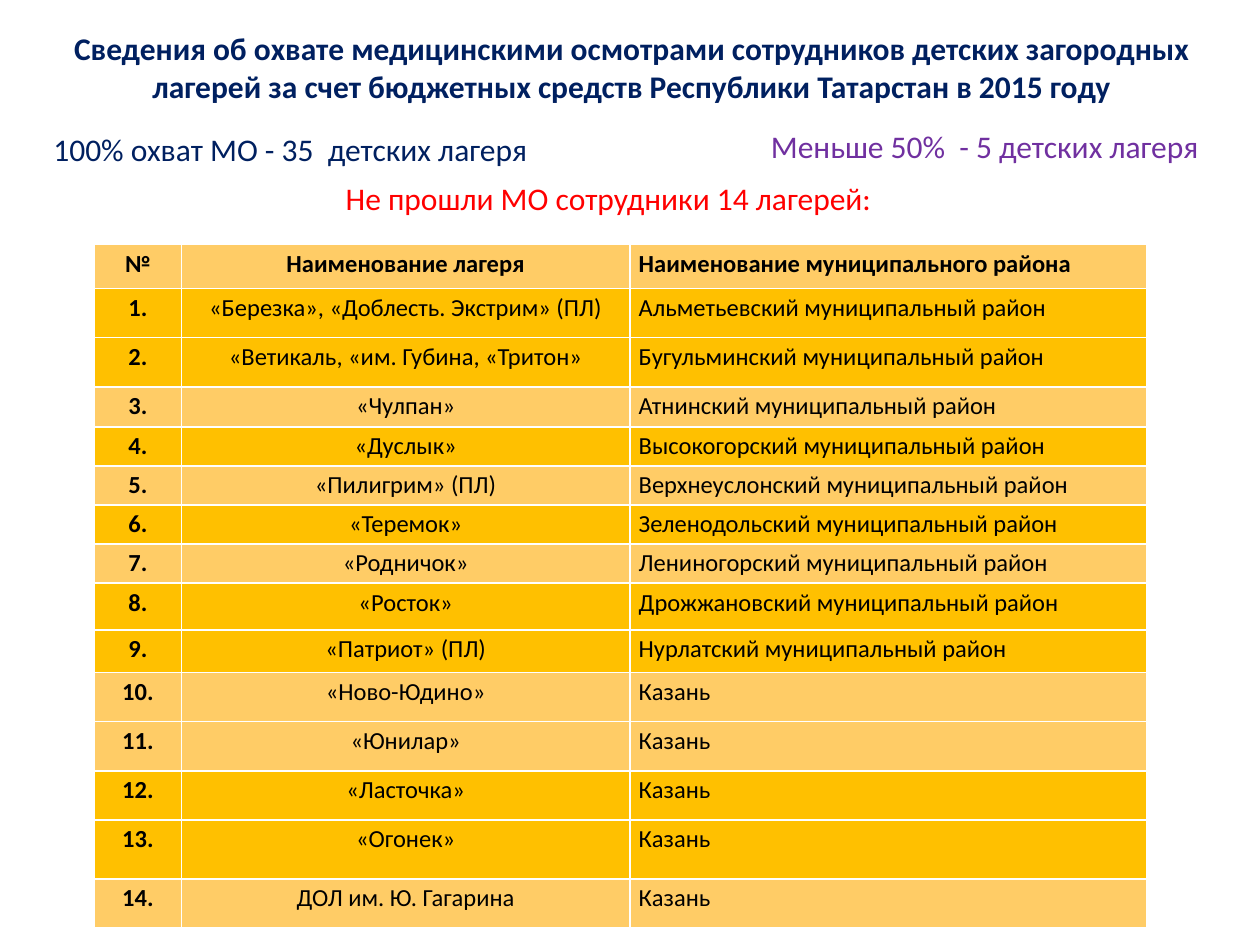
"""Build the slide on medical check-ups of children's camp staff."""
from dataclasses import dataclass

from pptx import Presentation
from pptx.dml.color import RGBColor
from pptx.enum.text import MSO_ANCHOR, MSO_AUTO_SIZE, PP_ALIGN as Align
from pptx.util import Inches, Pt


@dataclass(frozen=True)
class Theme:
    font: str = "Calibri"
    heading_size: int = 18
    table_size: int = 14
    navy: str = "002060"
    purple: str = "7030A0"
    red: str = "FF0000"
    black: str = "000000"
    light: str = "FFCC66"
    amber: str = "FFC000"


theme = Theme()


def write(frame, text, color=theme.navy, size=theme.heading_size, bold=False,
          align=Align.CENTER, spacing=1.0):
    frame.text = text
    paragraph = frame.paragraphs[0]
    paragraph.alignment = align
    paragraph.line_spacing = spacing
    font = paragraph.runs[0].font
    font.name = theme.font
    font.size = Pt(size)
    font.bold = bold
    font.color.rgb = RGBColor.from_string(color)


deck = Presentation()
deck.slide_width, deck.slide_height = Inches(10), Inches(7.5)
slide = deck.slides.add_slide(deck.slide_layouts[5])

title = slide.shapes.title
title.left, title.top = Inches(0.29), Inches(0.18)
title.width, title.height = Inches(9.45), Inches(0.71)
title.text_frame.vertical_anchor = MSO_ANCHOR.TOP
title.text_frame.auto_size = MSO_AUTO_SIZE.NONE
write(title.text_frame,
      "Сведения об охвате медицинскими осмотрами сотрудников детских загородных "
      "лагерей за счет бюджетных средств Республики Татарстан в 2015 году", bold=True)

summaries = [
    ("100% охват МО - 35  детских лагеря", 0.26, 0.98, 4.09, theme.navy, Align.CENTER),
    ("Меньше 50%  - 5 детских лагеря", 6.02, 0.96, 3.64, theme.purple, Align.LEFT),
    ("Не прошли МО сотрудники 14 лагерей:", 0.46, 1.37, 8.74, theme.red, Align.CENTER),
]
for text, left, top, width, color, align in summaries:
    summary = slide.shapes.add_textbox(Inches(left), Inches(top), Inches(width), Inches(0.4))
    summary.text_frame.word_wrap = True
    write(summary.text_frame, text, color=color, align=align)

district = "муниципальный район"
camps = [
    ("«Березка», «Доблесть. Экстрим» (ПЛ)", f"Альметьевский {district}", 0.39, theme.amber),
    ("«Ветикаль, «им. Губина, «Тритон»", f"Бугульминский {district}", 0.39, theme.amber),
    ("«Чулпан»", f"Атнинский {district}", 0.32, theme.light),
    ("«Дуслык»", f"Высокогорский {district}", 0.31, theme.amber),
    ("«Пилигрим» (ПЛ)", f"Верхнеуслонский {district}", 0.31, theme.light),
    ("«Теремок»", f"Зеленодольский {district}", 0.31, theme.amber),
    ("«Родничок»", f"Лениногорский {district}", 0.31, theme.light),
    ("«Росток»", f"Дрожжановский {district}", 0.37, theme.amber),
    ("«Патриот» (ПЛ)", f"Нурлатский {district}", 0.34, theme.amber),
    ("«Ново-Юдино»", "Казань", 0.39, theme.light),
    ("«Юнилар»", "Казань", 0.39, theme.light),
    ("«Ласточка»", "Казань", 0.39, theme.amber),
    ("«Огонек»", "Казань", 0.47, theme.amber),
    ("ДОЛ им. Ю. Гагарина", "Казань", 0.39, theme.light),
]
rows = [("№", "Наименование лагеря", "Наименование муниципального района", 0.35, theme.light)]
rows += [(f"{number}.", *camp) for number, camp in enumerate(camps, 1)]

camp_table = slide.shapes.add_table(len(rows), 3, Inches(0.75), Inches(1.94),
                                    Inches(8.35), Inches(5.45)).table
for column, width in zip(camp_table.columns, (0.69, 3.56, 4.1)):
    column.width = Inches(width)

for row_index, (*texts, height, fill) in enumerate(rows):
    camp_table.rows[row_index].height = Inches(height)
    for column_index, text in enumerate(texts):
        cell = camp_table.cell(row_index, column_index)
        cell.margin_left = cell.margin_right = Inches(0.07)
        cell.margin_top = cell.margin_bottom = 0
        cell.fill.solid()
        cell.fill.fore_color.rgb = RGBColor.from_string(fill)
        write(cell.text_frame, text, color=theme.black, size=theme.table_size,
              bold=row_index == 0 or column_index == 0,
              align=Align.LEFT if column_index == 2 else Align.CENTER, spacing=1.15)

deck.save("out.pptx")
